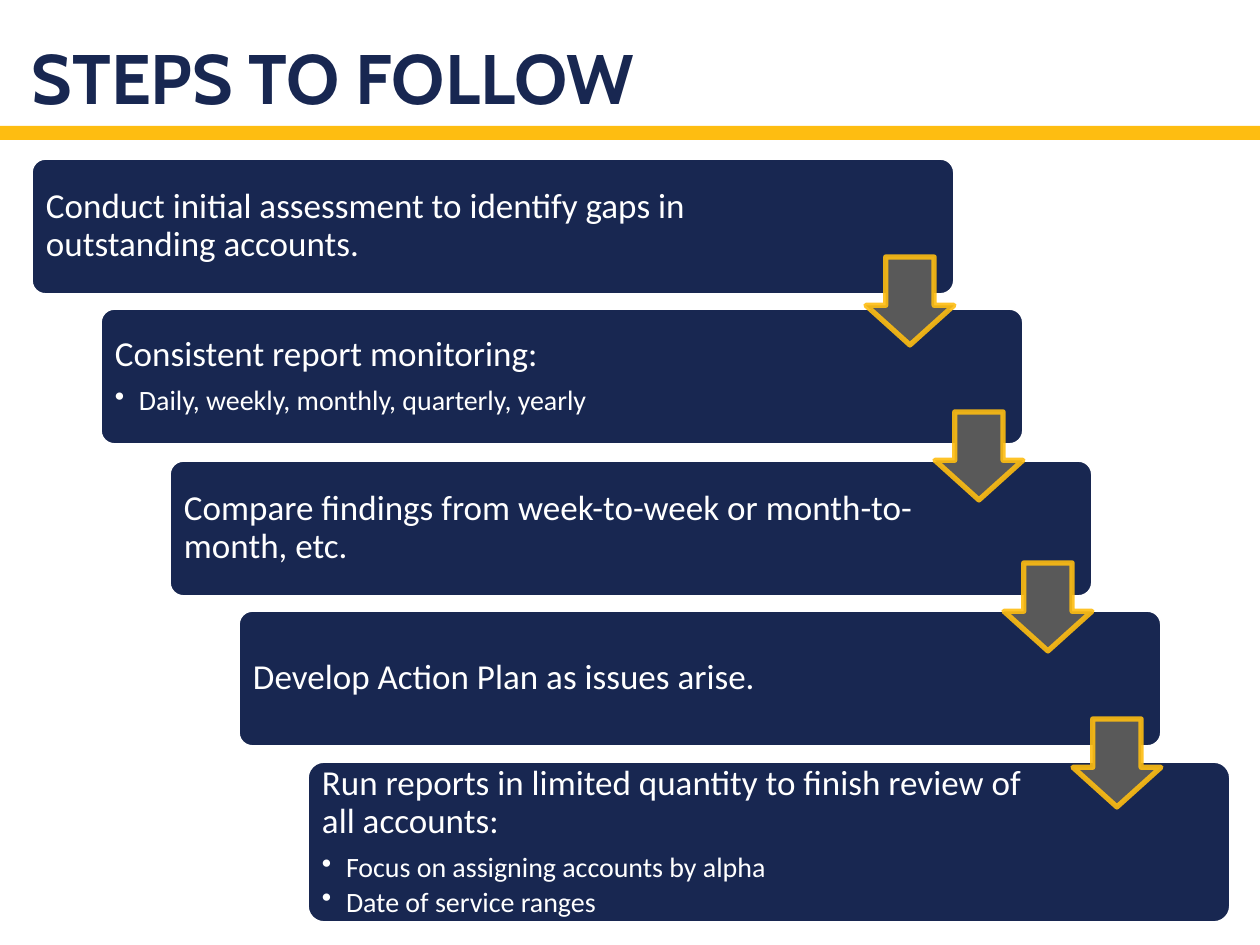
from dataclasses import dataclass

from lxml.etree import SubElement
from pptx import Presentation
from pptx.dml.color import RGBColor
from pptx.enum.shapes import MSO_SHAPE as Preset
from pptx.enum.text import MSO_ANCHOR as Anchor
from pptx.oxml.ns import qn
from pptx.shapes.autoshape import Shape
from pptx.slide import Slide
from pptx.text.text import TextFrame, _Paragraph as Paragraph
from pptx.util import Emu, Pt

EMU_PER_PX = 914400 / 126


@dataclass(frozen=True)
class Theme:
    navy: str = "182751"
    gold: str = "FEBD11"
    gray: str = "595959"
    white: str = "FFFFFF"
    title_font: str = "Cabin"
    body_font: str = "Calibri"
    title_size: int = 40
    step_size: int = 20
    bullet_size: int = 16
    step_space: float = 7
    bullet_space: float = 2.4
    line_spacing: float = 0.9


@dataclass(frozen=True)
class Box:
    left: int
    top: int
    width: int
    height: int

    def emu(self) -> tuple[Emu, ...]:
        return tuple(px(n) for n in (self.left, self.top, self.width, self.height))


@dataclass(frozen=True)
class Step:
    top: int
    text: str
    bullets: tuple[str, ...] = ()
    height: int = 135


THEME = Theme()
STEPS = (
    Step(159, "Conduct initial assessment to identify gaps in outstanding accounts."),
    Step(309, "Consistent report monitoring:", ("Daily, weekly, monthly, quarterly, yearly",)),
    Step(461, "Compare findings from week-to-week or month-to-month, etc."),
    Step(611, "Develop Action Plan as issues arise."),
    Step(762, "Run reports in limited quantity to finish review of all accounts:",
         ("Focus on assigning accounts by alpha", "Date of service ranges"), 160),
)
ARROW_TOPS = (257, 412, 563, 719)
STEP_LEFT, ARROW_LEFT, STAIR = 32, 866, 69
STEP_WIDTH, ARROW_SIZE = 922, 88
TEXT_WIDTH, TEXT_OFFSET, TEXT_INSET, BULLET_INDENT = 757, 4, 10, 24


def px(length: int) -> Emu:
    return Emu(round(length * EMU_PER_PX))


def color(value: str) -> RGBColor:
    return RGBColor.from_string(value)


def add_filled(slide: Slide, preset: Preset, box: Box, fill: str,
               adjustments: tuple[float, ...] = ()) -> Shape:
    shape = slide.shapes.add_shape(preset, *box.emu())
    shape.shadow.inherit = False
    shape.fill.solid()
    shape.fill.fore_color.rgb = color(fill)
    shape.line.fill.background()
    for index, value in enumerate(adjustments):
        shape.adjustments[index] = value
    return shape


def set_line(shape: Shape, value: str, width: float) -> None:
    shape.line.color.rgb = color(value)
    shape.line.width = Pt(width)


def add_text_frame(slide: Slide, box: Box, anchor: Anchor,
                   side_inset: int, end_inset: int) -> TextFrame:
    frame = slide.shapes.add_textbox(*box.emu()).text_frame
    frame.word_wrap = True
    frame.vertical_anchor = anchor
    frame.margin_left = frame.margin_right = px(side_inset)
    frame.margin_top = frame.margin_bottom = px(end_inset)
    return frame


def write(paragraph: Paragraph, text: str, font: str, size: int, value: str,
          space_after: float = 0, bold: bool = False) -> None:
    paragraph.line_spacing = THEME.line_spacing
    paragraph.space_after = Pt(space_after)
    run = paragraph.add_run()
    run.text = text
    run.font.name = font
    run.font.size = Pt(size)
    run.font.bold = bold
    run.font.color.rgb = color(value)


def add_bullet(frame: TextFrame, text: str) -> None:
    paragraph = frame.add_paragraph()
    paragraph.level = 1
    write(paragraph, text, THEME.body_font, THEME.bullet_size, THEME.white,
          THEME.bullet_space)
    properties = paragraph._p.get_or_add_pPr()
    properties.set("marL", str(px(BULLET_INDENT)))
    properties.set("indent", str(-px(BULLET_INDENT)))
    SubElement(properties, qn("a:buChar"), char="•")


def add_title(slide: Slide) -> None:
    add_filled(slide, Preset.RECTANGLE, Box(0, 126, 1260, 14), THEME.gold)
    frame = add_text_frame(slide, Box(32, 0, 1197, 126), Anchor.BOTTOM, 0, 6)
    write(frame.paragraphs[0], "STEPS TO FOLLOW", THEME.title_font,
          THEME.title_size, THEME.navy, bold=True)


def add_step(slide: Slide, index: int, step: Step) -> None:
    left = STEP_LEFT + index * STAIR
    card = add_filled(slide, Preset.ROUNDED_RECTANGLE,
                      Box(left, step.top, STEP_WIDTH, step.height), THEME.navy, (0.1,))
    set_line(card, THEME.white, 1)
    text_box = Box(left + TEXT_OFFSET, step.top + TEXT_OFFSET,
                   TEXT_WIDTH, step.height - 2 * TEXT_OFFSET)
    frame = add_text_frame(slide, text_box, Anchor.MIDDLE, TEXT_INSET, TEXT_INSET)
    write(frame.paragraphs[0], step.text, THEME.body_font, THEME.step_size,
          THEME.white, THEME.step_space)
    for bullet in step.bullets:
        add_bullet(frame, bullet)


def add_arrow(slide: Slide, index: int, top: int) -> None:
    box = Box(ARROW_LEFT + index * STAIR, top, ARROW_SIZE, ARROW_SIZE)
    arrow = add_filled(slide, Preset.DOWN_ARROW, box, THEME.gray, (0.55, 0.45))
    set_line(arrow, THEME.gold, 3)
    line_color = arrow.line._ln.find(f".//{qn('a:srgbClr')}")
    SubElement(line_color, qn("a:alpha"), val="90000")


def main() -> None:
    presentation = Presentation()
    presentation.slide_width, presentation.slide_height = px(1260), px(945)
    slide = presentation.slides.add_slide(presentation.slide_layouts[6])
    add_title(slide)
    for index, step in enumerate(STEPS):
        add_step(slide, index, step)
    for index, top in enumerate(ARROW_TOPS):
        add_arrow(slide, index, top)
    presentation.save("out.pptx")


if __name__ == "__main__":
    main()
